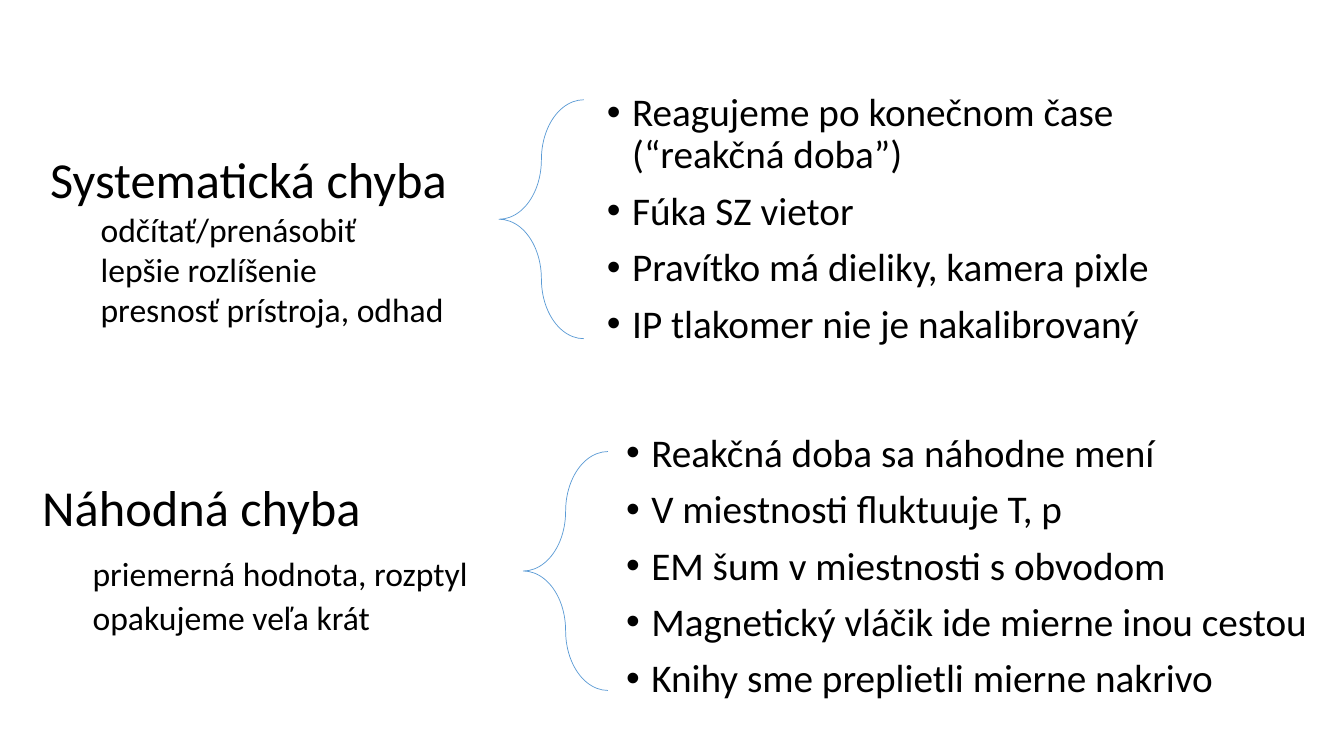
from lxml.etree import SubElement
from pptx import Presentation
from pptx.dml.color import RGBColor
from pptx.enum.shapes import MSO_SHAPE
from pptx.enum.text import MSO_ANCHOR, MSO_AUTO_SIZE
from pptx.oxml.ns import qn
from pptx.util import Inches, Pt


def color(value):
    return RGBColor.from_string(value)


def format_spans(para, font="Calibri", size=24, ink="000000"):
    for span in para.runs:
        span.font.name = font
        span.font.size = Pt(size)
        span.font.color.rgb = color(ink)


def write_text(para, text, **style):
    para.text = text
    format_spans(para, **style)


class ErrorPage:
    ink = "000000"
    accent = "5B9BD5"
    font = "Calibri"

    def __init__(self, deck):
        self.page = deck.slides.add_slide(deck.slide_layouts[3])
        title = self.page.shapes.title.element
        title.getparent().remove(title)

    def place(self, box, left, top, width, height):
        box.left, box.top = Inches(left), Inches(top)
        box.width, box.height = Inches(width), Inches(height)

    def bullet_list(self, index, bounds, items):
        box = self.page.placeholders[index]
        self.place(box, *bounds)
        frame = box.text_frame
        frame.word_wrap = True
        frame.auto_size = MSO_AUTO_SIZE.NONE
        frame.vertical_anchor = MSO_ANCHOR.TOP
        for number, item in enumerate(items):
            para = frame.paragraphs[0] if number == 0 else frame.add_paragraph()
            properties = para._p.get_or_add_pPr()
            properties.set("marL", str(Inches(0.25)))
            properties.set("indent", str(-Inches(0.25)))
            SubElement(properties, qn("a:buFont"), typeface="Arial")
            SubElement(properties, qn("a:buChar"), char="•")
            para.line_spacing = 0.9
            para.space_before = Pt(10 if number else 0)
            write_text(para, item, font=self.font, size=28, ink=self.ink)

    def cause(self, bounds, heading, remedies, wrap, tab_size=24):
        box = self.page.shapes.add_textbox(*(Inches(length) for length in bounds))
        frame = box.text_frame
        frame.word_wrap = wrap
        frame.auto_size = MSO_AUTO_SIZE.SHAPE_TO_FIT_TEXT
        write_text(frame.paragraphs[0], heading, font=self.font, size=36, ink=self.ink)
        for number, remedy in enumerate(remedies):
            para = frame.add_paragraph()
            para.add_run().text = "\t"
            para.add_run().text = remedy
            format_spans(para, font=self.font, size=24, ink=self.ink)
            if number == 0:
                para.runs[0].font.size = Pt(tab_size)

    def brace(self, left, top):
        shape = self.page.shapes.add_shape(
            MSO_SHAPE.LEFT_BRACE, Inches(left), Inches(top), Inches(0.84), Inches(2.37)
        )
        shape.adjustments[0] = 0.72
        shape.adjustments[1] = 0.5
        shape.shadow.inherit = False
        shape.fill.background()
        shape.line.color.rgb = color(self.accent)
        shape.line.width = Pt(0.5)


def main():
    deck = Presentation()
    deck.slide_width, deck.slide_height = Inches(13.33), Inches(7.5)
    errors = ErrorPage(deck)

    errors.bullet_list(1, (5.92, 0.87, 7, 2.82), [
        "Reagujeme po konečnom čase\v(“reakčná doba”)",
        "Fúka SZ vietor",
        "Pravítko má dieliky, kamera pixle",
        "IP tlakomer nie je nakalibrovaný",
    ])
    errors.cause(
        (0.4, 1.42, 4.6, 1.92),
        "Systematická chyba",
        ["odčítať/prenásobiť", "lepšie rozlíšenie", "presnosť prístroja, odhad"],
        wrap=False,
    )
    errors.brace(4.95, 0.99)

    errors.bullet_list(2, (6.11, 4.25, 7.22, 2.83), [
        "Reakčná doba sa náhodne mení",
        "V miestnosti fluktuuje T, p",
        "EM šum v miestnosti s obvodom",
        "Magnetický vláčik ide mierne inou cestou",
        "Knihy sme preplietli mierne nakrivo",
    ])
    errors.cause(
        (0.32, 4.67, 4.87, 1.72),
        "Náhodná chyba",
        ["priemerná hodnota, rozptyl", "opakujeme veľa krát"],
        wrap=True,
        tab_size=36,
    )
    errors.brace(5.19, 4.48)

    deck.save("out.pptx")


if __name__ == "__main__":
    main()
